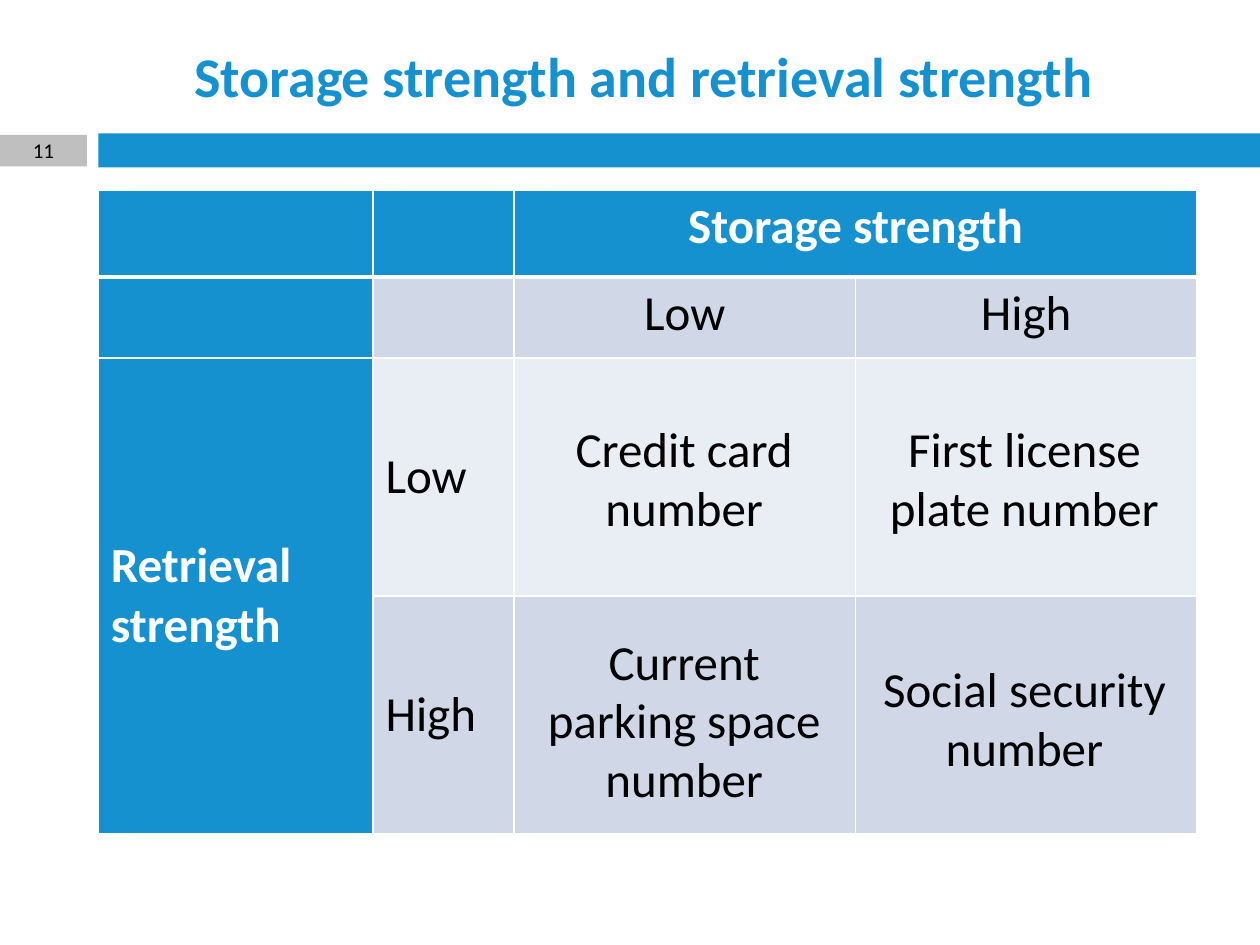
"""Build a slide on storage strength and retrieval strength."""
import lxml.etree
import pptx
import pptx.dml.color
import pptx.enum.shapes
import pptx.enum.text
import pptx.oxml.ns
import pptx.util

Inches = pptx.util.Inches
Align = pptx.enum.text.PP_ALIGN
Anchor = pptx.enum.text.MSO_ANCHOR

THEME = {
    "font": "Calibri", "blue": "1691D0", "gray": "BFBFBF", "white": "FFFFFF",
    "black": "000000", "dark": "D0D8E8", "light": "E9EDF4",
    "title": 32, "text": 28, "small": 12,
}
TITLE = "Storage strength and retrieval strength"
NUMBER = "11"
BARS = [("blue", (0.78, 1.06, 9.22, 0.27)), ("gray", (0, 1.07, 0.69, 0.25))]
COLS = [2.18, 1.12, 2.71, 2.71]
ROWS = [0.69, 0.64, 1.89, 1.89]
GRID = [
    ["", "", "Storage strength", ""],
    ["", "", "Low", "High"],
    ["Retrieval strength", "Low", "", ""],
    ["", "High", "", ""],
]
FILLS = ["blue", "dark", "light", "dark"]
MERGES = [((0, 2), (0, 3)), ((2, 0), (3, 0))]
NOTES = [
    ("Credit card number", 4.12, 3.27, 1.04),
    ("First license plate number", 6.82, 3.27, 1.04),
    ("Current parking space number", 4.12, 4.96, 1.51),
    ("Social security number", 6.82, 5.18, 1.04),
]


def color(name):
    return pptx.dml.color.RGBColor.from_string(THEME[name])


def write(frame, text, size, ink, align=Align.CENTER, bold=False):
    frame.text = text
    line = frame.paragraphs[0]
    line.alignment = align
    for run in line.runs:
        run.font.name = THEME["font"]
        run.font.size = pptx.util.Pt(THEME[size])
        run.font.bold = bold
        run.font.color.rgb = color(ink)


def add_box(slide, text, box, size, anchor=Anchor.TOP):
    frame = slide.shapes.add_textbox(*map(Inches, box)).text_frame
    frame.word_wrap = True
    frame.vertical_anchor = anchor
    write(frame, text, size, "black")
    return frame


def add_edge(cell, side, width):
    name = pptx.oxml.ns.qn
    line = lxml.etree.SubElement(
        cell._tc.get_or_add_tcPr(), name("a:ln" + side), w=str(pptx.util.Pt(width)))
    fill = lxml.etree.SubElement(line, name("a:solidFill"))
    lxml.etree.SubElement(fill, name("a:srgbClr"), val=THEME["white"])


def add_grid(slide):
    box = map(Inches, (0.78, 1.51, sum(COLS), sum(ROWS)))
    table = slide.shapes.add_table(len(ROWS), len(COLS), *box).table
    table.horz_banding = False
    for col, width in zip(table.columns, COLS):
        col.width = Inches(width)
    for row, height in zip(table.rows, ROWS):
        row.height = Inches(height)
    for start, end in MERGES:
        table.cell(*start).merge(table.cell(*end))
    for r, words in enumerate(GRID):
        for c, text in enumerate(words):
            cell = table.cell(r, c)
            head = r == 0 or c == 0
            for side in "LRTB":
                thick = (r, side) in [(0, "B"), (1, "T")]
                add_edge(cell, side, 3 if thick else 1)
            cell.fill.solid()
            cell.fill.fore_color.rgb = color("blue" if head else FILLS[r])
            cell.vertical_anchor = Anchor.TOP if r < 2 else Anchor.MIDDLE
            if text:
                write(cell.text_frame, text, "text", "white" if head else "black",
                      Align.CENTER if r < 2 else Align.LEFT, head)


def main():
    deck = pptx.Presentation()
    deck.slide_width, deck.slide_height = Inches(10), Inches(7.5)
    slide = deck.slides.add_slide(deck.slide_layouts[5])
    for fill, box in BARS:
        bar = slide.shapes.add_shape(
            pptx.enum.shapes.MSO_SHAPE.RECTANGLE, *map(Inches, box))
        bar.shadow.inherit = False
        bar.fill.solid()
        bar.fill.fore_color.rgb = color(fill)
        bar.line.fill.background()
    title = slide.shapes.title
    title.left, title.top, title.width, title.height = map(
        Inches, (0.78, 0.26, 8.66, 0.68))
    title.text_frame.vertical_anchor = Anchor.MIDDLE
    write(title.text_frame, TITLE, "title", "blue", bold=True)
    add_grid(slide)
    add_box(slide, NUMBER, BARS[1][1], "small", Anchor.MIDDLE)
    for text, left, top, height in NOTES:
        frame = add_box(slide, text, (left, top, 2.62, height), "text")
        frame.auto_size = pptx.enum.text.MSO_AUTO_SIZE.SHAPE_TO_FIT_TEXT
    deck.save("out.pptx")


if __name__ == "__main__":
    main()
